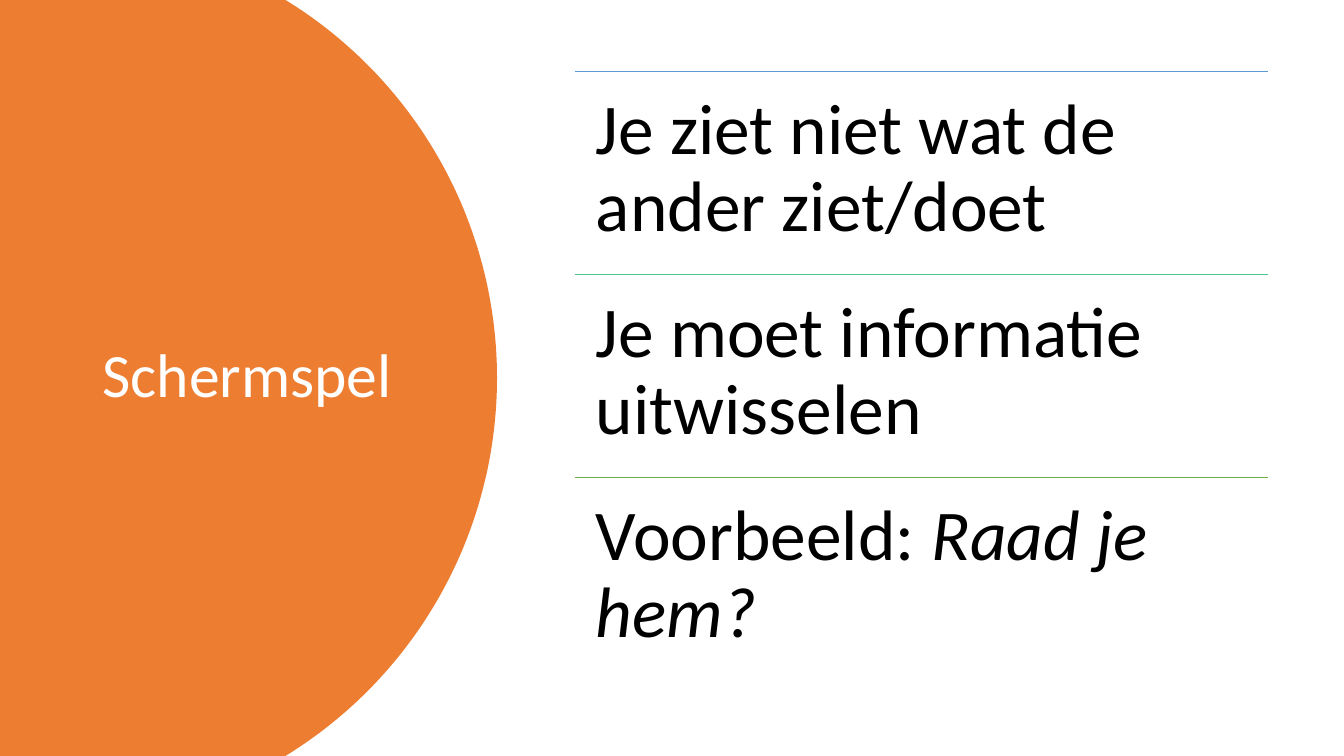
from dataclasses import dataclass
from math import asin, cos, sin

from lxml import etree
from pptx import Presentation
from pptx.dml.color import RGBColor
from pptx.enum.shapes import MSO_CONNECTOR
from pptx.enum.text import MSO_ANCHOR
from pptx.oxml.ns import qn
from pptx.slide import Slide
from pptx.util import Inches, Pt

STRAIGHT = MSO_CONNECTOR.STRAIGHT
TOP, MIDDLE = MSO_ANCHOR.TOP, MSO_ANCHOR.MIDDLE

PAGE_WIDTH, PAGE_HEIGHT = 13.33, 7.5
CIRCLE_RADIUS, CIRCLE_RIGHT = 4.4, 4.93
ARC_STEPS = 120
LIST_LEFT, LIST_TOP, LIST_WIDTH, LIST_HEIGHT = 5.7, 0.71, 6.88, 6.04


@dataclass(frozen=True)
class Theme:
    font: str = "Calibri"
    panel: str = "ED7D31"
    title_color: str = "FFFFFF"
    body_color: str = "000000"
    title_size: int = 44
    body_size: int = 51
    rule_width: int = 1


@dataclass(frozen=True)
class Span:
    text: str
    italic: bool = False


@dataclass(frozen=True)
class Row:
    rule_color: str
    spans: tuple[Span, ...]


@dataclass(frozen=True)
class Area:
    left: float
    top: float
    width: float
    height: float


THEME = Theme()
ROWS = (
    Row("5B9BD5", (Span("Je ziet niet wat de ander ziet/doet"),)),
    Row("4DC58D", (Span("Je moet informatie uitwisselen"),)),
    Row("70AD47", (Span("Voorbeeld: "), Span("Raad je hem?", italic=True))),
)


def add_panel(page: Slide) -> None:
    """Fill the left side up to a circular arc that spans the page height."""
    middle = PAGE_HEIGHT / 2
    center = CIRCLE_RIGHT - CIRCLE_RADIUS
    half_angle = asin(middle / CIRCLE_RADIUS)
    angles = [half_angle * (2 * step / ARC_STEPS - 1) for step in range(ARC_STEPS + 1)]
    arc = [
        (Inches(center + CIRCLE_RADIUS * cos(angle)), Inches(middle + CIRCLE_RADIUS * sin(angle)))
        for angle in angles
    ]
    builder = page.shapes.build_freeform(0, 0)
    builder.add_line_segments([*arc, (0, Inches(PAGE_HEIGHT))], close=True)
    panel = builder.convert_to_shape()
    panel.shadow.inherit = False
    panel.fill.solid()
    panel.fill.fore_color.rgb = RGBColor.from_string(THEME.panel)
    panel.line.fill.background()


def add_text(page: Slide, area: Area, spans: tuple[Span, ...], size: int, color: str,
             anchor: MSO_ANCHOR, inset_x: float, inset_y: float) -> None:
    box = page.shapes.add_textbox(
        Inches(area.left), Inches(area.top), Inches(area.width), Inches(area.height))
    frame = box.text_frame
    frame.word_wrap = True
    frame.vertical_anchor = anchor
    frame.margin_left = frame.margin_right = Inches(inset_x)
    frame.margin_top = frame.margin_bottom = Inches(inset_y)
    para = frame.paragraphs[0]
    para.line_spacing = 0.9
    para.text = spans[0].text
    for span in spans[1:]:
        para.add_run().text = span.text
    for span, run in zip(spans, para.runs):
        run.font.name = THEME.font
        run.font.size = Pt(size)
        run.font.italic = span.italic
        run.font.color.rgb = RGBColor.from_string(color)


def add_rule(page: Slide, top: float, color: str) -> None:
    rule = page.shapes.add_connector(
        STRAIGHT, Inches(LIST_LEFT), Inches(top), Inches(LIST_LEFT + LIST_WIDTH), Inches(top))
    rule.line.color.rgb = RGBColor.from_string(color)
    rule.line.width = Pt(THEME.rule_width)
    etree.SubElement(rule.element.spPr, qn("a:effectLst"))


def main() -> None:
    deck = Presentation()
    deck.slide_width, deck.slide_height = Inches(PAGE_WIDTH), Inches(PAGE_HEIGHT)
    page = deck.slides.add_slide(deck.slide_layouts[6])
    add_panel(page)
    add_text(page, Area(0.92, 0.7, 3.23, 6.09), (Span("Schermspel"),),
             THEME.title_size, THEME.title_color, MIDDLE, 0.1, 0.05)
    row_height = LIST_HEIGHT / len(ROWS)
    for index, row in enumerate(ROWS):
        top = LIST_TOP + index * row_height
        add_rule(page, top, row.rule_color)
        add_text(page, Area(LIST_LEFT, top, LIST_WIDTH, row_height), row.spans,
                 THEME.body_size, THEME.body_color, TOP, 0.21, 0.21)
    deck.save("out.pptx")


if __name__ == "__main__":
    main()
